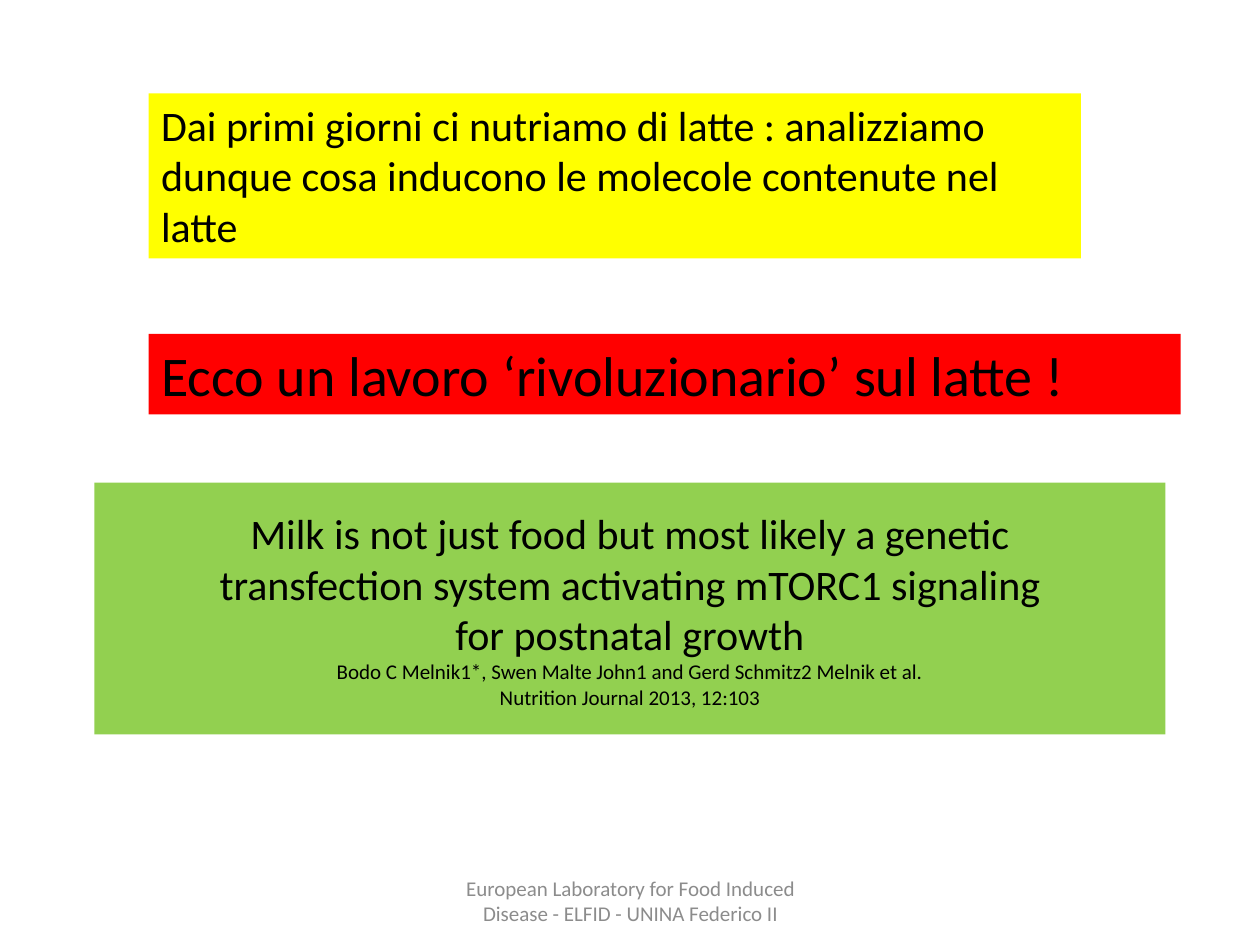
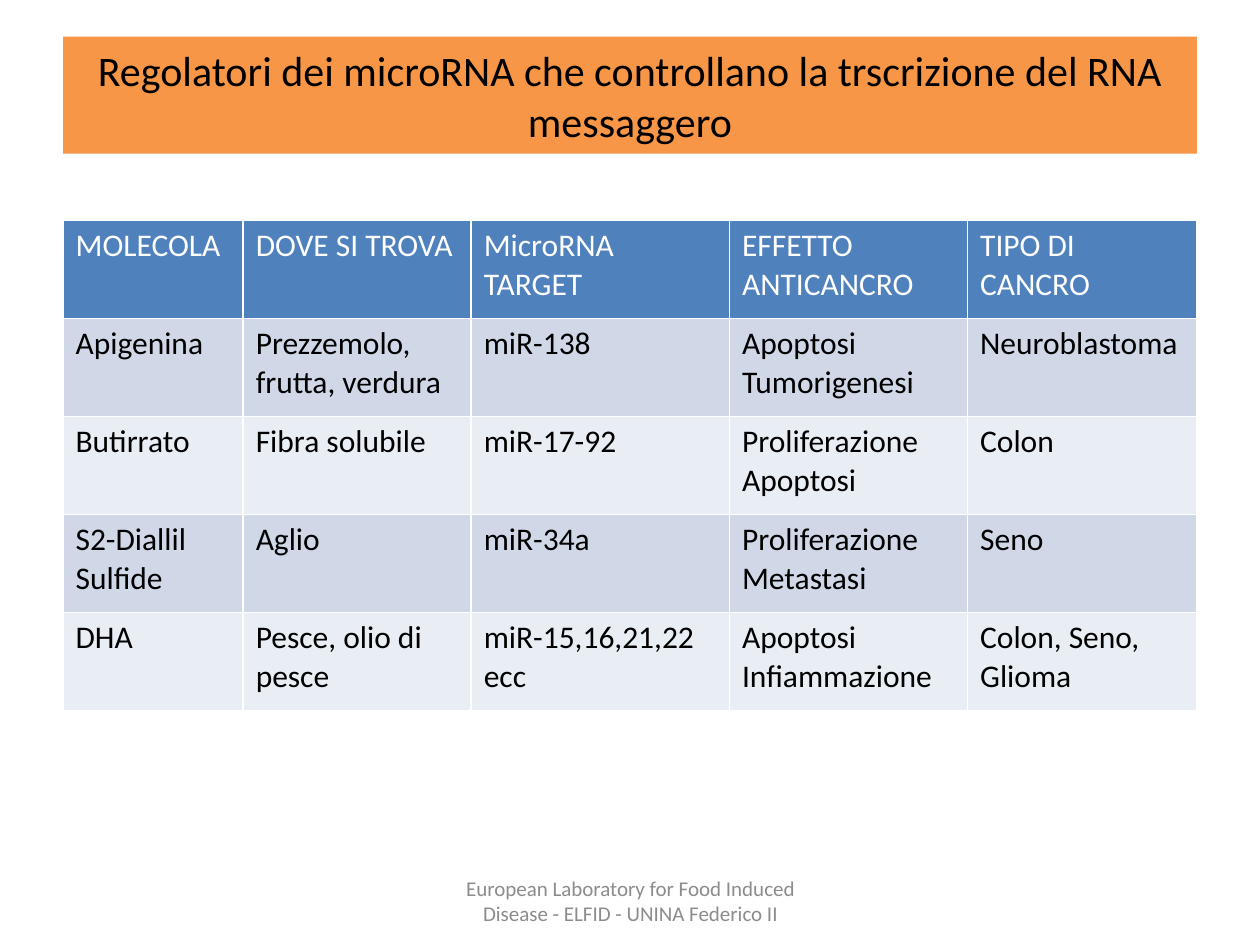
from dataclasses import dataclass

from pptx import Presentation
from pptx.dml.color import RGBColor
from pptx.enum.shapes import MSO_SHAPE
from pptx.enum.text import MSO_ANCHOR, MSO_AUTO_SIZE, PP_ALIGN
from pptx.util import Inches, Pt

RECTANGLE = MSO_SHAPE.RECTANGLE
TOP, MIDDLE = MSO_ANCHOR.TOP, MSO_ANCHOR.MIDDLE
LEFT, CENTER = PP_ALIGN.LEFT, PP_ALIGN.CENTER
NO_AUTOFIT = MSO_AUTO_SIZE.NONE
TITLE_ONLY, BLANK = 5, 6


@dataclass(frozen=True)
class Theme:
    font: str = "Calibri"
    ink: str = "000000"
    white: str = "FFFFFF"
    footer_gray: str = "8C8C8C"
    yellow: str = "FFFF00"
    red: str = "FF0000"
    green: str = "92D050"
    orange: str = "F79646"
    header_blue: str = "4F81BD"
    bands: tuple = ("D0D8E8", "E9EDF4")
    headline: int = 32
    title: int = 24
    table: int = 18
    small: int = 12


theme = Theme()


def write(frame, text, size=theme.title, color=theme.ink, align=LEFT, anchor=TOP):
    """Append each line of text as a paragraph, filling an empty first one."""
    frame.word_wrap = True
    frame.vertical_anchor = anchor
    for line in text.split("\n"):
        first = frame.paragraphs[0]
        para = frame.add_paragraph() if first.runs else first
        para.alignment = align
        span = para.add_run()
        span.text = line
        span.font.name = theme.font
        span.font.size = Pt(size)
        span.font.bold = False
        span.font.color.rgb = RGBColor.from_string(color)


def paint(filled, color):
    filled.fill.solid()
    filled.fill.fore_color.rgb = RGBColor.from_string(color)


deck = Presentation()
deck.slide_width, deck.slide_height = Inches(10), Inches(7.5)

# Slide 1: statements leading to the paper
milk_page = deck.slides.add_slide(deck.slide_layouts[BLANK])
panels = [
    ((0.75, 3.83, 8.5, 2), theme.green, CENTER, MIDDLE, [
        ("Milk is not just food but most likely a genetic\n"
         "transfection system activating mTORC1 signaling\n"
         "for postnatal growth", theme.title),
        ("Bodo C Melnik1*, Swen Malte John1 and Gerd Schmitz2 Melnik et al.\n"
         "Nutrition Journal 2013, 12:103", theme.small),
    ]),
    ((1.18, 2.65, 8.19, 0.64), theme.red, LEFT, TOP, [
        ("Ecco un lavoro ‘rivoluzionario’ sul latte !", theme.headline),
    ]),
    ((1.18, 0.74, 7.4, 1.31), theme.yellow, LEFT, TOP, [
        ("Dai primi giorni ci nutriamo di latte : analizziamo dunque cosa "
         "inducono le molecole contenute nel latte", theme.title),
    ]),
]
for place, color, align, anchor, texts in panels:
    panel = milk_page.shapes.add_shape(RECTANGLE, *map(Inches, place))
    panel.shadow.inherit = False
    panel.line.fill.background()
    paint(panel, color)
    for text, size in texts:
        write(panel.text_frame, text, size=size, align=align, anchor=anchor)

# Slide 2: table of microRNA regulators
regulator_page = deck.slides.add_slide(deck.slide_layouts[TITLE_ONLY])
title = regulator_page.shapes.title
title.left, title.top, title.width, title.height = map(Inches, (0.5, 0.29, 9, 0.93))
paint(title, theme.orange)
write(title.text_frame,
      "Regolatori dei microRNA che controllano la trscrizione del RNA messaggero",
      align=CENTER, anchor=MIDDLE)
title.text_frame.auto_size = NO_AUTOFIT

regulators = [
    ("MOLECOLA", "DOVE SI TROVA", "MicroRNA TARGET", "EFFETTO ANTICANCRO", "TIPO DI CANCRO"),
    ("Apigenina", "Prezzemolo, frutta, verdura", "miR-138", "Apoptosi Tumorigenesi",
     "Neuroblastoma"),
    ("Butirrato", "Fibra solubile", "miR-17-92", "Proliferazione Apoptosi", "Colon"),
    ("S2-Diallil Sulfide", "Aglio", "miR-34a", "Proliferazione Metastasi", "Seno"),
    ("DHA", "Pesce, olio di pesce", "miR-15,16,21,22 ecc", "Apoptosi Infiammazione",
     "Colon, Seno, Glioma"),
]
column_widths = (1.43, 1.81, 2.05, 1.89, 1.82)
table = regulator_page.shapes.add_table(
    len(regulators), len(column_widths),
    Inches(0.5), Inches(1.75), Inches(9), Inches(3.89)).table
for column, width in zip(table.columns, column_widths):
    column.width = Inches(width)
for row_index, values in enumerate(regulators):
    is_header = row_index == 0
    fill = theme.header_blue if is_header else theme.bands[(row_index - 1) % 2]
    for column_index, value in enumerate(values):
        cell = table.cell(row_index, column_index)
        paint(cell, fill)
        write(cell.text_frame, value, size=theme.table,
              color=theme.white if is_header else theme.ink)

# Footer on every slide
for page in deck.slides:
    footer = page.shapes.add_textbox(*map(Inches, (3.42, 6.95, 3.17, 0.4)))
    write(footer.text_frame,
          "European Laboratory for Food Induced Disease - ELFID - UNINA Federico II",
          size=theme.small, color=theme.footer_gray, align=CENTER, anchor=MIDDLE)

deck.save("out.pptx")
